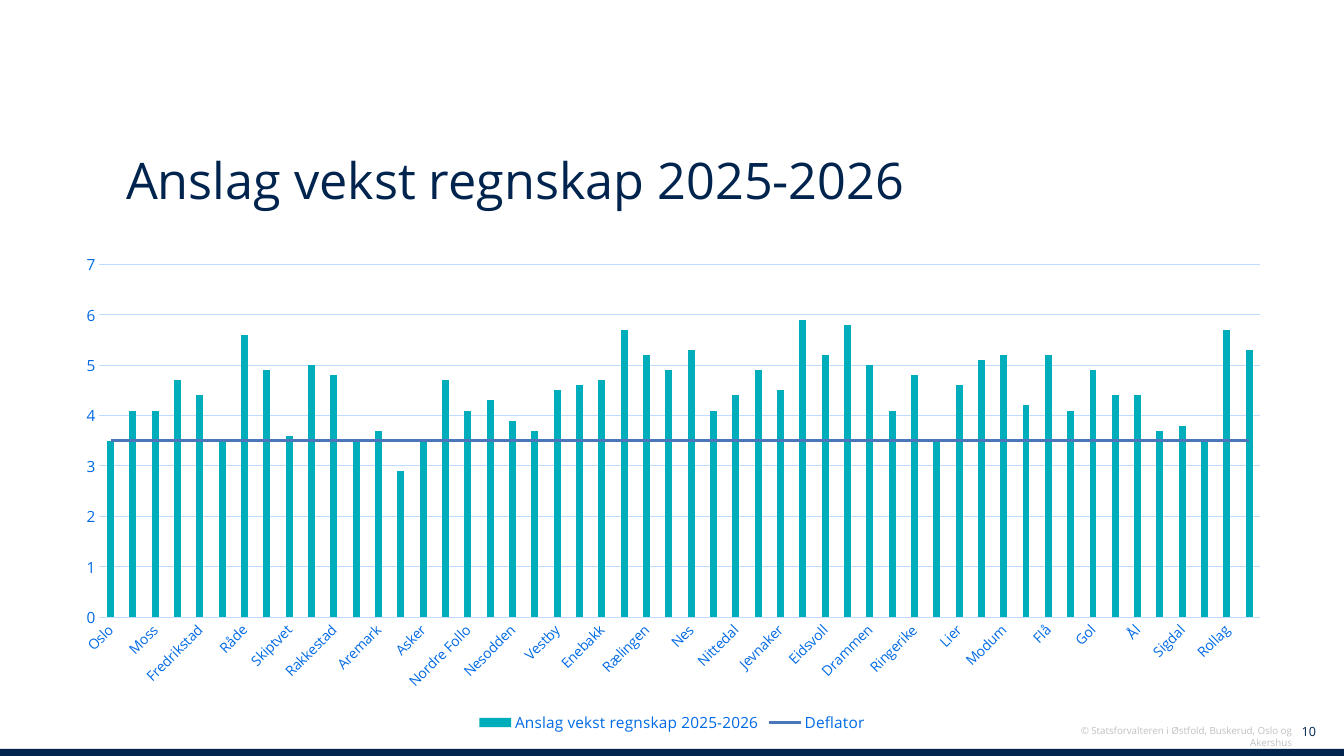
from lxml import etree
from pptx import Presentation
from pptx.chart.data import CategoryChartData
from pptx.dml.color import RGBColor
from pptx.enum.chart import XL_CHART_TYPE as ChartType, XL_LEGEND_POSITION as LegendPosition
from pptx.enum.chart import XL_TICK_MARK as TickMark
from pptx.enum.shapes import MSO_SHAPE as Shape
from pptx.enum.text import MSO_ANCHOR as Anchor, MSO_AUTO_SIZE as AutoSize, PP_ALIGN as Align
from pptx.oxml.ns import qn
from pptx.util import Emu, Pt

TITLE = "Anslag vekst regnskap 2025-2026"
COPYRIGHT = "© Statsforvalteren i Østfold, Buskerud, Oslo og Akershus"
PAGE = "10"
DEFLATOR = 3.5
GROWTH = [
    ("Oslo", 3.5), ("Halden", 4.1), ("Moss", 4.1), ("Sarpsborg", 4.7),
    ("Fredrikstad", 4.4), ("Hvaler", 3.5), ("Råde", 5.6), ("Våler (Viken)", 4.9),
    ("Skiptvet", 3.6), ("Indre Østfold", 5.0), ("Rakkestad", 4.8), ("Marker", 3.5),
    ("Aremark", 3.7), ("Bærum", 2.9), ("Asker", 3.5), ("Lillestrøm", 4.7),
    ("Nordre Follo", 4.1), ("Ullensaker", 4.3), ("Nesodden", 3.9), ("Frogn", 3.7),
    ("Vestby", 4.5), ("Ås", 4.6), ("Enebakk", 4.7), ("Lørenskog", 5.7),
    ("Rælingen", 5.2), ("Aurskog-Høland", 4.9), ("Nes", 5.3), ("Gjerdrum", 4.1),
    ("Nittedal", 4.4), ("Lunner", 4.9), ("Jevnaker", 4.5), ("Nannestad", 5.9),
    ("Eidsvoll", 5.2), ("Hurdal", 5.8), ("Drammen", 5.0), ("Kongsberg", 4.1),
    ("Ringerike", 4.8), ("Hole", 3.5), ("Lier", 4.6), ("Øvre Eiker", 5.1),
    ("Modum", 5.2), ("Krødsherad", 4.2), ("Flå", 5.2), ("Nesbyen", 4.1),
    ("Gol", 4.9), ("Hemsedal", 4.4), ("Ål", 4.4), ("Hol", 3.7),
    ("Sigdal", 3.8), ("Flesberg", 3.5), ("Rollag", 5.7), ("Nore og Uvdal", 5.3),
]
COLORS = {
    "navy": "00244E", "grey": "BFC2C0", "blue": "006AE5",
    "grid": "BEDCFF", "growth": "00ADBA", "deflator": "4C76BA",
}
FONT = "Open Sans"
WIDTH, HEIGHT = 1344, 756
EMU_PER_PX = 12192000 / WIDTH


def px(*lengths):
    return [Emu(round(length * EMU_PER_PX)) for length in lengths]


def color(name):
    return RGBColor.from_string(COLORS[name])


def style(font, size, tint):
    font.name, font.size, font.bold = FONT, Pt(size), False
    font.color.rgb = color(tint)


def write(shape, text, size, tint, align=Align.LEFT, anchor=Anchor.TOP):
    frame = shape.text_frame
    frame.word_wrap, frame.auto_size = True, AutoSize.NONE
    frame.vertical_anchor = anchor
    paragraph = frame.paragraphs[0]
    paragraph.alignment = align
    run = paragraph.add_run()
    run.text = text
    style(run.font, size, tint)


def outline(line, tint, width):
    line.color.rgb = color(tint)
    line.width = Pt(width)


def move_to_line_chart(bars, series):
    line_chart = etree.Element(qn("c:lineChart"))
    etree.SubElement(line_chart, qn("c:grouping"), val="standard")
    etree.SubElement(line_chart, qn("c:varyColors"), val="0")
    for invert in series.findall(qn("c:invertIfNegative")):
        series.remove(invert)
    line_chart.append(series)
    etree.SubElement(line_chart, qn("c:marker"), val="1")
    for axis in bars.findall(qn("c:axId")):
        etree.SubElement(line_chart, qn("c:axId"), val=axis.get("val"))
    bars.addnext(line_chart)


prs = Presentation()
prs.slide_width, prs.slide_height = px(WIDTH, HEIGHT)
slide = prs.slides.add_slide(prs.slide_layouts[5])

title = slide.shapes.title
title.left, title.top, title.width, title.height = px(116, 96, 1111, 119)
write(title, TITLE, 36, "navy", anchor=Anchor.BOTTOM)

footer_bar = slide.shapes.add_shape(Shape.RECTANGLE, *px(0, 749, WIDTH, HEIGHT - 749))
footer_bar.shadow.inherit = False
footer_bar.fill.solid()
footer_bar.fill.fore_color.rgb = color("navy")
footer_bar.line.fill.background()

page_number = slide.shapes.add_textbox(*px(1272, 718, 54, 26))
write(page_number, PAGE, 9, "navy", align=Align.RIGHT, anchor=Anchor.MIDDLE)
copyright_line = slide.shapes.add_textbox(*px(1028, 720, 274, 22))
write(copyright_line, COPYRIGHT, 7, "grey", align=Align.RIGHT)

growth_data = CategoryChartData(number_format="0.0")
growth_data.categories = [town for town, _ in GROWTH]
growth_data.add_series(TITLE, [growth for _, growth in GROWTH])
growth_data.add_series("Deflator", [DEFLATOR] * len(GROWTH))
chart = slide.shapes.add_chart(
    ChartType.COLUMN_CLUSTERED, *px(59, 244, 1226, 493), growth_data
).chart
style(chart.font, 10, "navy")
chart.has_title = False
chart.has_legend = True
chart.legend.position = LegendPosition.BOTTOM
chart.legend.include_in_layout = False
style(chart.legend.font, 11, "blue")

towns, percent = chart.category_axis, chart.value_axis
for axis, size in ((towns, 10), (percent, 11)):
    axis.major_tick_mark = axis.minor_tick_mark = TickMark.NONE
    style(axis.tick_labels.font, size, "blue")
outline(towns.format.line, "grid", 0.75)
towns_body = towns._element.find(qn("c:txPr")).find(qn("a:bodyPr"))
towns_body.set("rot", "-2700000")
towns_body.set("vert", "horz")
percent.minimum_scale, percent.maximum_scale, percent.major_unit = 0, 7, 1
percent.tick_labels.number_format = "0"
percent.tick_labels.number_format_is_linked = False
percent.format.line.fill.background()
outline(percent.major_gridlines.format.line, "grid", 0.75)

columns = chart.plots[0]
columns.gap_width = 219
columns.vary_by_categories = False
growth_series, deflator_series = columns.series
growth_series.format.fill.solid()
growth_series.format.fill.fore_color.rgb = color("growth")
move_to_line_chart(columns._element, deflator_series._element)

deflator_line = chart.plots[1].series[0]
outline(deflator_line.format.line, "deflator", 2.25)
deflator_line.smooth = False
deflator_marker = etree.Element(qn("c:marker"))
etree.SubElement(deflator_marker, qn("c:symbol"), val="none")
deflator_line._element.find(qn("c:spPr")).addnext(deflator_marker)

prs.save("out.pptx")
